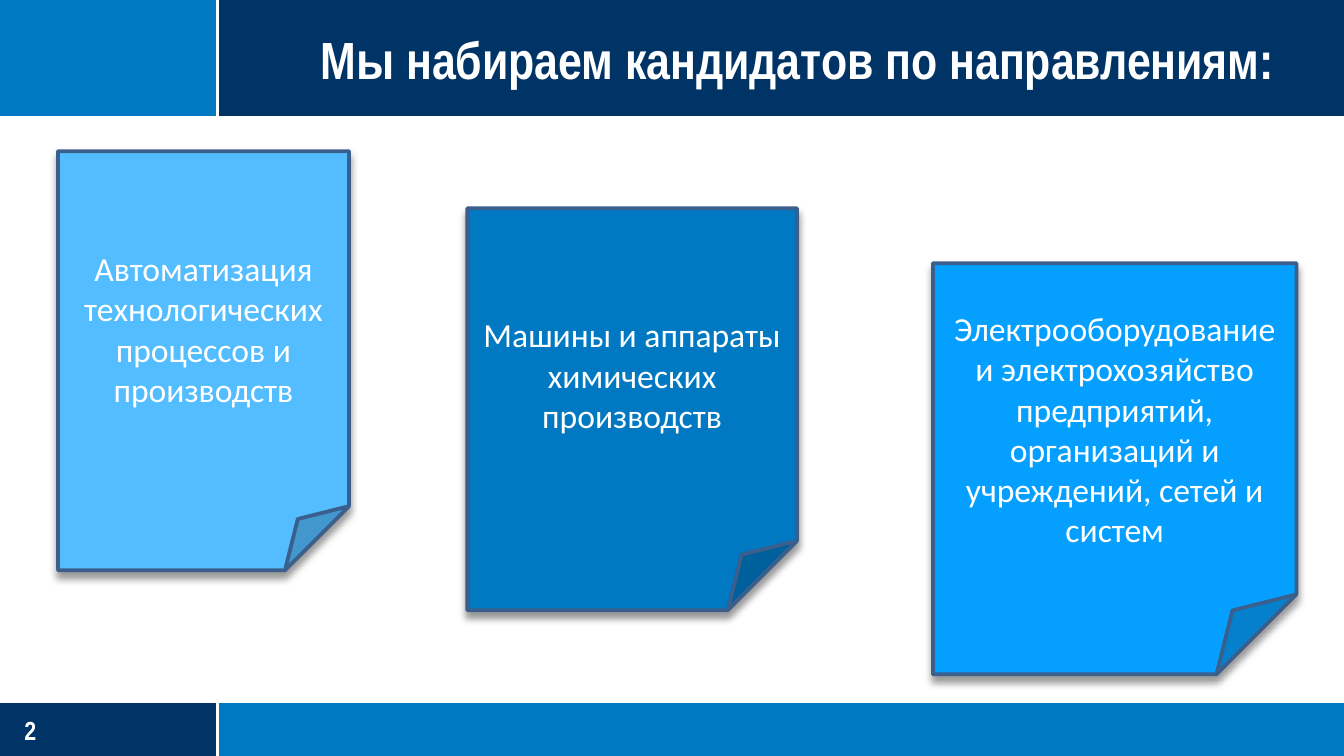
from lxml import etree
from pptx import Presentation
from pptx.dml.color import RGBColor
from pptx.enum.shapes import MSO_CONNECTOR, MSO_SHAPE
from pptx.enum.text import MSO_ANCHOR, MSO_AUTO_SIZE, PP_ALIGN
from pptx.oxml import parse_xml
from pptx.oxml.ns import nsdecls, qn
from pptx.util import Pt

RECTANGLE = MSO_SHAPE.RECTANGLE
FOLDED_CORNER = MSO_SHAPE.FOLDED_CORNER
STRAIGHT = MSO_CONNECTOR.STRAIGHT
MIDDLE = MSO_ANCHOR.MIDDLE
NO_AUTOFIT = MSO_AUTO_SIZE.NONE
CENTER, LEFT = PP_ALIGN.CENTER, PP_ALIGN.LEFT

WIDTH, HEIGHT = 720, 405
HEADER, FOOTER_TOP, SIDE = 63, 376.5, 116.6
BLUE, NAVY, WHITE, OUTLINE = "0079C2", "003366", "FFFFFF", "3A5F8C"

SHADOW = (
    f'<a:effectLst {nsdecls("a")}>'
    '<a:outerShdw blurRad="50800" dist="38100" dir="5400000" rotWithShape="0">'
    '<a:srgbClr val="000000"><a:alpha val="40000"/></a:srgbClr>'
    '</a:outerShdw></a:effectLst>'
)


def color(hex_string):
    return RGBColor.from_string(hex_string)


def write(shape, text, size, font, align, bold=False, inset=None):
    """Fill a shape with one white, vertically centred paragraph."""
    frame = shape.text_frame
    frame.text = text
    frame.word_wrap = True
    frame.auto_size = NO_AUTOFIT
    frame.vertical_anchor = MIDDLE
    if inset is not None:
        frame.margin_left = frame.margin_right = Pt(inset)
        frame.margin_top = frame.margin_bottom = Pt(inset)
    paragraph = frame.paragraphs[0]
    paragraph.alignment = align
    run_font = paragraph.runs[0].font
    run_font.name, run_font.size, run_font.bold = font, Pt(size), bold
    run_font.color.rgb = color(WHITE)


prs = Presentation()
prs.slide_width, prs.slide_height = Pt(WIDTH), Pt(HEIGHT)
slide = prs.slides.add_slide(prs.slide_layouts[5])
shapes = slide.shapes

# Header and footer bands
bands = [
    (FOOTER_TOP, WIDTH, HEIGHT - FOOTER_TOP, BLUE),
    (0, WIDTH, HEADER, NAVY),
    (0, SIDE, HEADER, BLUE),
    (FOOTER_TOP, SIDE, HEIGHT - FOOTER_TOP, NAVY),
]
for top, width, height, fill in bands:
    band = shapes.add_shape(RECTANGLE, 0, Pt(top), Pt(width), Pt(height))
    band.shadow.inherit = False
    band.fill.solid()
    band.fill.fore_color.rgb = color(fill)
    band.line.fill.background()

page_number = shapes.add_textbox(Pt(13), Pt(382.5), Pt(73), Pt(17))
write(page_number, "2", 14, "Arial Narrow", LEFT, bold=True, inset=0)

# White dividers between the bands
dividers = [
    (0, FOOTER_TOP - 0.5, WIDTH, FOOTER_TOP - 0.5),
    (SIDE, FOOTER_TOP - 0.5, SIDE, HEIGHT),
    (SIDE, 0, SIDE, HEADER),
    (0, HEADER, WIDTH, HEADER),
]
for ends in dividers:
    divider = shapes.add_connector(STRAIGHT, *map(Pt, ends))
    divider.line.color.rgb = color(WHITE)
    divider.line.width = Pt(1.25)
    etree.SubElement(divider.element.spPr, qn("a:effectLst"))

# Title, brought in front of the header band
title = shapes.title
title.left, title.top, title.width, title.height = Pt(141), Pt(8), Pt(572), Pt(47)
write(title, "Мы набираем кандидатов по направлениям:", 28, "Arial Narrow",
      CENTER, bold=True, inset=0)
title.element.getparent().append(title.element)

# Note cards: left, top, width, height, fold, fill, text
cards = [
    (31, 81, 156, 224.5, 0.22, "53BDFF",
     "Автоматизация технологических процессов и производств"),
    (250.3, 111.6, 176.7, 215.3, 0.21, BLUE,
     "Машины и аппараты химических производств"),
    (499.8, 141, 194.7, 220.3, 0.22, "05A0FF",
     "Электрооборудование и электрохозяйство предприятий, "
     "организаций и учреждений, сетей и систем"),
]
for left, top, width, height, fold, fill, direction in cards:
    card = shapes.add_shape(FOLDED_CORNER, Pt(left), Pt(top), Pt(width), Pt(height))
    # The library lists no adjustment for this shape, so the fold is set in XML
    geometry = card.element.spPr.find(qn("a:prstGeom"))
    for guides in geometry.findall(qn("a:avLst")):
        geometry.remove(guides)
    guides = etree.SubElement(geometry, qn("a:avLst"))
    etree.SubElement(guides, qn("a:gd"), name="adj", fmla=f"val {round(fold * 100000)}")
    card.fill.solid()
    card.fill.fore_color.rgb = color(fill)
    card.line.color.rgb = color(OUTLINE)
    card.line.width = Pt(2)
    card.element.spPr.append(parse_xml(SHADOW))
    write(card, direction, 18, "Calibri", CENTER)

prs.save("out.pptx")
